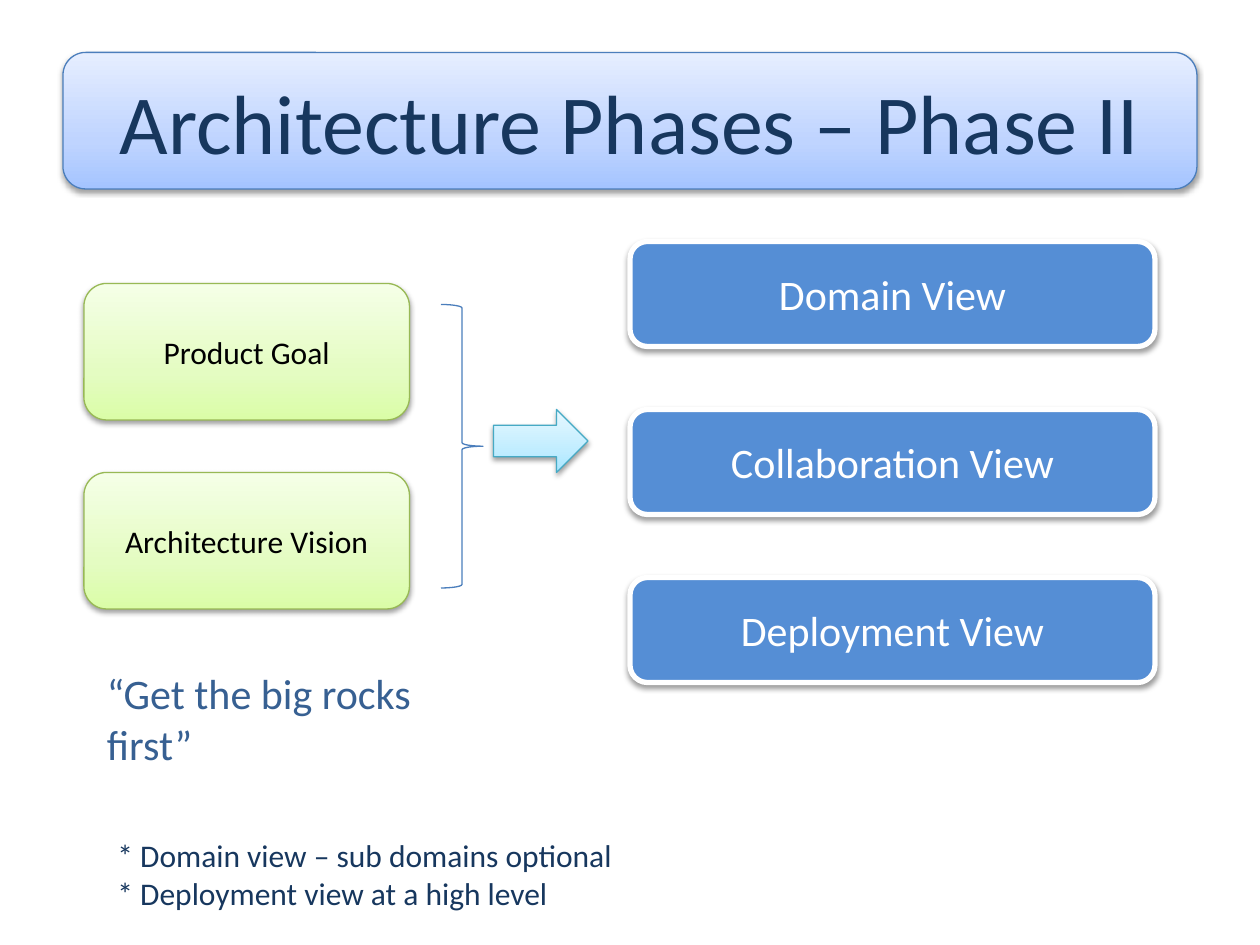
from dataclasses import dataclass
from typing import Any, Optional

from lxml import etree
from pptx import Presentation
from pptx import util as u
from pptx.dml.color import RGBColor
from pptx.enum import shapes, text
from pptx.oxml import ns

WIDTH, HEIGHT = u.Inches(10), u.Inches(7.5)
COLUMNS, ROWS = 120, 90
FONT = "Calibri"
NAVY, WHITE, BLACK, BLUE = "17375E", "FFFFFF", "000000", "4B7EBC"
Kind = shapes.MSO_SHAPE


@dataclass(frozen=True)
class Area:
    """A rectangle in grid columns and rows."""

    column: float
    row: float
    columns: float
    rows: float

    def lengths(self) -> tuple[int, int, int, int]:
        """Return left, top, width and height on the slide."""
        across, down = WIDTH / COLUMNS, HEIGHT / ROWS
        return (round(self.column * across), round(self.row * down),
                round(self.columns * across), round(self.rows * down))


@dataclass(frozen=True)
class Look:
    """Fill colours from bottom to top, outline, and label format."""

    fill: tuple[str, ...]
    line: str
    line_width: float = 0.75
    size: float = 18
    ink: str = BLACK


TITLE = Look(("A4C4FF", "BFD4FF", "E6EEFF"), BLUE, size=48, ink=NAVY)
INPUT = Look(("DAFDA7", "E4FCC2", "F5FFE7"), "98B955")
VIEW = Look(("558ED5",), WHITE, line_width=3, size=24, ink=WHITE)
ARROW = Look(("A7E6FF", "C1EDFF", "E7F8FF"), "46AAC5")
BRACE = Look((), BLUE)


def color(value: str) -> RGBColor:
    """Turn a hex string into a colour."""
    return RGBColor.from_string(value)


def element(parent: Any, tag: str, **attributes: Any) -> Any:
    """Add a drawing element with its attributes."""
    return etree.SubElement(parent, ns.qn(f"a:{tag}"),
                            {name: str(value) for name, value in attributes.items()})


def paint(shape: Any, fill: tuple[str, ...]) -> None:
    """Give a shape no fill, one colour, or an upward gradient."""
    if not fill:
        shape.fill.background()
    elif len(fill) == 1:
        shape.fill.solid()
        shape.fill.fore_color.rgb = color(fill[0])
    else:
        shape.fill.gradient()
        gradient = shape._element.spPr.find(ns.qn("a:gradFill"))
        for child in list(gradient):
            gradient.remove(child)
        stops = element(gradient, "gsLst")
        for share, value in zip((0, 35, 100), fill):
            element(element(stops, "gs", pos=share * 1000), "srgbClr", val=value)
        element(gradient, "lin", ang=270 * 60000, scaled=0)


def cast_shadow(shape: Any) -> None:
    """Put a soft shadow below a shape."""
    effects = shape._element.spPr.find(ns.qn("a:effectLst"))
    shadow = element(effects, "outerShdw", blurRad=u.Pt(3.1), dist=u.Pt(1.6),
                     dir=90 * 60000, rotWithShape=0)
    element(element(shadow, "srgbClr", val=BLACK), "alpha", val=38000)


def write(frame: Any, words: str, *, size: float, ink: str,
          align: Any = text.PP_ALIGN.LEFT, anchor: Any = text.MSO_ANCHOR.TOP) -> None:
    """Write one paragraph per line of words."""
    frame.word_wrap = True
    frame.vertical_anchor = anchor
    for index, line in enumerate(words.split("\n")):
        paragraph = frame.add_paragraph() if index else frame.paragraphs[0]
        paragraph.alignment = align
        run = paragraph.add_run()
        run.text = line
        run.font.name, run.font.size = FONT, u.Pt(size)
        run.font.color.rgb = color(ink)


def draw(slide: Any, area: Area, look: Look, label: Optional[str] = None,
         kind: Any = Kind.ROUNDED_RECTANGLE) -> None:
    """Draw a preset shape with an optional centred label."""
    shape = slide.shapes.add_shape(kind, *area.lengths())
    paint(shape, look.fill)
    shape.line.color.rgb = color(look.line)
    shape.line.width = u.Pt(look.line_width)
    shape.shadow.inherit = False
    if look.fill:
        cast_shadow(shape)
    if label:
        write(shape.text_frame, label, size=look.size, ink=look.ink,
              align=text.PP_ALIGN.CENTER, anchor=text.MSO_ANCHOR.MIDDLE)


def remark(slide: Any, area: Area, words: str, *, size: float, ink: str) -> None:
    """Add free text that fits its box to the words."""
    frame = slide.shapes.add_textbox(*area.lengths()).text_frame
    write(frame, words, size=size, ink=ink)
    frame.auto_size = text.MSO_AUTO_SIZE.SHAPE_TO_FIT_TEXT


def main() -> None:
    """Build and save the slide."""
    deck = Presentation()
    deck.slide_width, deck.slide_height = WIDTH, HEIGHT
    slide = deck.slides.add_slide(deck.slide_layouts[6])

    draw(slide, Area(6, 5, 108, 13), TITLE, "Architecture Phases – Phase II")
    for index, goal in enumerate(("Product Goal", "Architecture Vision")):
        draw(slide, Area(8, 27 + 18 * index, 31, 13), INPUT, goal)
    for index, view in enumerate(("Domain", "Collaboration", "Deployment")):
        draw(slide, Area(60, 23 + 16 * index, 50, 10), VIEW, f"{view} View")
    draw(slide, Area(42, 29, 4, 27), BRACE, kind=Kind.RIGHT_BRACE)
    draw(slide, Area(47, 39, 9, 6), ARROW, kind=Kind.RIGHT_ARROW)

    remark(slide, Area(9, 63, 40, 10.9), "“Get the big rocks first”",
           size=24, ink="376092")
    remark(slide, Area(10, 79, 51, 8.5),
           "* Domain view – sub domains optional\n* Deployment view at a high level",
           size=18, ink=NAVY)
    deck.save("out.pptx")


if __name__ == "__main__":
    main()
